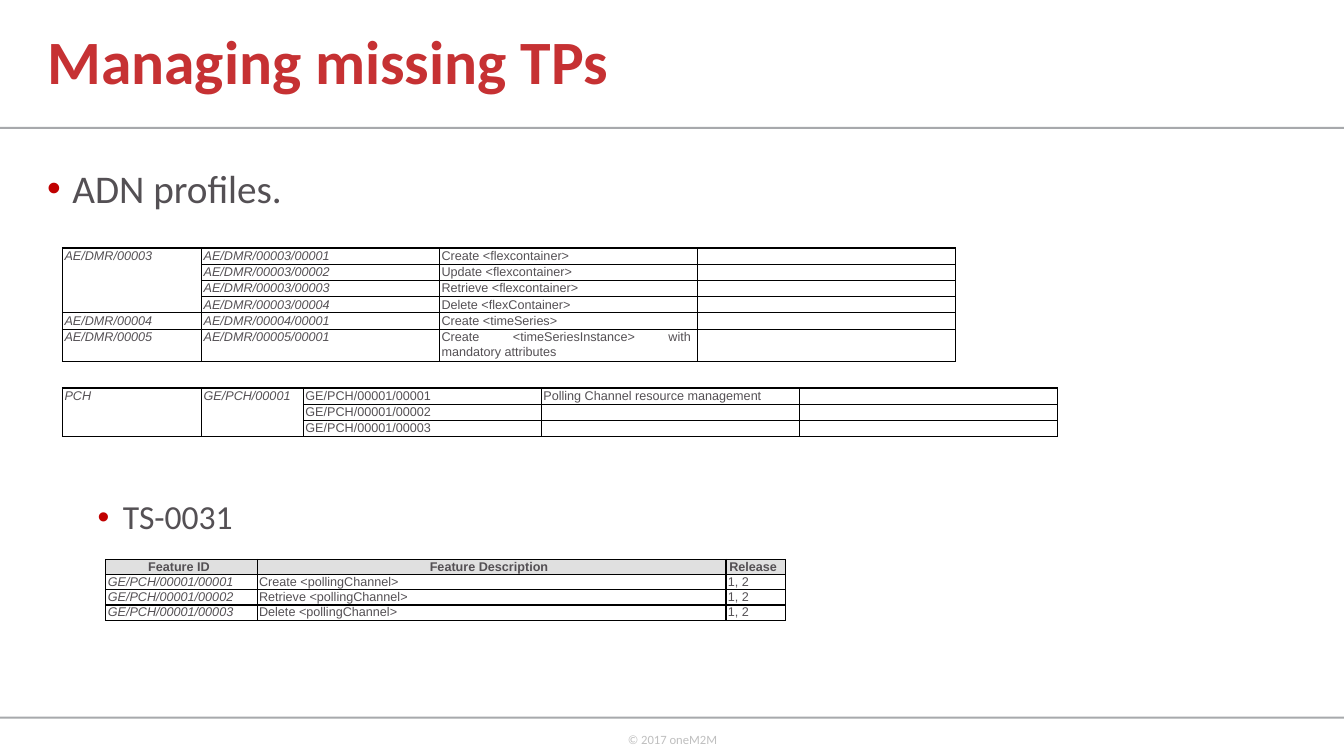
from lxml import etree
from pptx import Presentation
from pptx.dml.color import RGBColor
from pptx.enum.shapes import MSO_SHAPE
from pptx.enum.text import MSO_ANCHOR, PP_ALIGN
from pptx.oxml.ns import qn
from pptx.util import Inches, Pt

RECTANGLE = MSO_SHAPE.RECTANGLE
TOP, MIDDLE = MSO_ANCHOR.TOP, MSO_ANCHOR.MIDDLE
LEFT, CENTER, JUSTIFY = PP_ALIGN.LEFT, PP_ALIGN.CENTER, PP_ALIGN.JUSTIFY
COLORS = {
    "title": "C63133",
    "text": "545054",
    "bullet": "C00000",
    "rule": "A7A9AC",
    "footer": "BFBFBF",
    "header": "E0E0E0",
    "border": "000000",
}

prs = Presentation()
prs.slide_width = Inches(13.33)
prs.slide_height = Inches(7.5)
slide = prs.slides.add_slide(prs.slide_layouts[6])


def add_text(text, left, top, width, height, size, color, bullet=False):
    frame = slide.shapes.add_textbox(
        Inches(left), Inches(top), Inches(width), Inches(height)
    ).text_frame
    frame.word_wrap = True
    frame.text = text
    line = frame.paragraphs[0]
    if bullet:
        props = line._p.get_or_add_pPr()
        props.set("marL", str(Inches(0.25)))
        props.set("indent", str(-Inches(0.25)))
        bullet_color = etree.SubElement(props, qn("a:buClr"))
        etree.SubElement(bullet_color, qn("a:srgbClr"), val=COLORS["bullet"])
        etree.SubElement(props, qn("a:buFont"), typeface="Arial")
        etree.SubElement(props, qn("a:buChar"), char="•")
        line.line_spacing = 0.9
    font = line.runs[0].font
    font.name = "Calibri"
    font.size = Pt(size)
    font.color.rgb = RGBColor.from_string(COLORS[color])
    return frame


def add_grid(left, top, widths, heights, rows, italic_columns, align, spacing, header=False):
    grid = slide.shapes.add_table(
        len(rows), len(widths), Inches(left), Inches(top),
        Inches(sum(widths)), Inches(sum(heights)),
    ).table
    grid.first_row = header
    grid.horz_banding = False
    for column, width in zip(grid.columns, widths):
        column.width = Inches(width)
    for row, height in zip(grid.rows, heights):
        row.height = Inches(height)
    for r, texts in enumerate(rows):
        is_header = header and r == 0
        for c, text in enumerate(texts):
            cell = grid.cell(r, c)
            cell.margin_left, cell.margin_right = Inches(0.02), Inches(0.07)
            cell.margin_top = cell.margin_bottom = 0
            cell.vertical_anchor = MIDDLE if is_header else TOP
            cell.text = text
            line = cell.text_frame.paragraphs[0]
            line.alignment = CENTER if is_header else align
            line.line_spacing = spacing
            for run in line.runs:
                run.font.name = "Arial"
                run.font.size = Pt(9)
                run.font.bold = is_header
                run.font.italic = c in italic_columns and not is_header
                run.font.color.rgb = RGBColor.from_string(COLORS["text"])
            if not text:
                etree.SubElement(line._p, qn("a:endParaRPr"), sz="900")
            cell_props = cell._tc.get_or_add_tcPr()
            for side in ("lnL", "lnR", "lnT", "lnB"):
                border = etree.SubElement(cell_props, qn("a:" + side), w=str(Pt(1)))
                paint = etree.SubElement(border, qn("a:solidFill"))
                etree.SubElement(paint, qn("a:srgbClr"), val=COLORS["border"])
            if is_header:
                cell.fill.solid()
                cell.fill.fore_color.rgb = RGBColor.from_string(COLORS["header"])
            else:
                cell.fill.background()
    return grid


for rule_top in (1.26, 7.11):
    rule = slide.shapes.add_shape(
        RECTANGLE, 0, Inches(rule_top), prs.slide_width, Inches(0.02)
    )
    rule.shadow.inherit = False
    rule.fill.solid()
    rule.fill.fore_color.rgb = RGBColor.from_string(COLORS["rule"])
    rule.line.fill.background()

footer = add_text("© 2017 oneM2M", 6.12, 7.21, 1.1, 0.25, 9, "footer")
footer.word_wrap = False
footer.paragraphs[0].alignment = CENTER

title = add_text("Managing missing TPs", 0.37, 0, 8.59, 1.28, 44, "title")
title.vertical_anchor = MIDDLE
title.paragraphs[0].line_spacing = 0.9
title.paragraphs[0].runs[0].font.bold = True

add_text("ADN profiles.", 0.37, 1.63, 11.5, 0.55, 28, "text", bullet=True)
add_text("TS-0031", 0.87, 4.92, 11, 0.5, 24, "text", bullet=True)

adn_rows = [
    ("AE/DMR/00003", "AE/DMR/00003/00001", "Create <flexcontainer>", ""),
    ("", "AE/DMR/00003/00002", "Update <flexcontainer>", ""),
    ("", "AE/DMR/00003/00003", "Retrieve <flexcontainer>", ""),
    ("", "AE/DMR/00003/00004", "Delete <flexContainer>", ""),
    ("AE/DMR/00004", "AE/DMR/00004/00001", "Create <timeSeries>", ""),
    ("AE/DMR/00005", "AE/DMR/00005/00001",
     "Create <timeSeriesInstance> with mandatory attributes", ""),
]
adn_profiles = add_grid(
    0.62, 2.46, [1.38, 2.36, 2.56, 2.56], [0.15] * 5 + [0.3],
    adn_rows, (0, 1), JUSTIFY, 1.07,
)
adn_profiles.cell(0, 0).merge(adn_profiles.cell(3, 0))

polling_rows = [
    ("PCH", "GE/PCH/00001", "GE/PCH/00001/00001", "Polling Channel resource management", ""),
    ("", "", "GE/PCH/00001/00002", "", ""),
    ("", "", "GE/PCH/00001/00003", "", ""),
]
polling_channel = add_grid(
    0.62, 3.85, [1.38, 1.01, 2.36, 2.56, 2.56], [0.15] * 3,
    polling_rows, (0, 1), JUSTIFY, 1.07,
)
for group in (0, 1):
    polling_channel.cell(0, group).merge(polling_channel.cell(2, group))

feature_rows = [
    ("Feature ID", "Feature Description", "Release"),
    ("GE/PCH/00001/00001", "Create <pollingChannel>", "1, 2"),
    ("GE/PCH/00001/00002", "Retrieve <pollingChannel>", "1, 2"),
    ("GE/PCH/00001/00003", "Delete <pollingChannel>", "1, 2"),
]
add_grid(
    1.05, 5.55, [1.5, 4.65, 0.59], [0.14] * 4,
    feature_rows, (0,), LEFT, 1.0, header=True,
)

prs.save("out.pptx")
